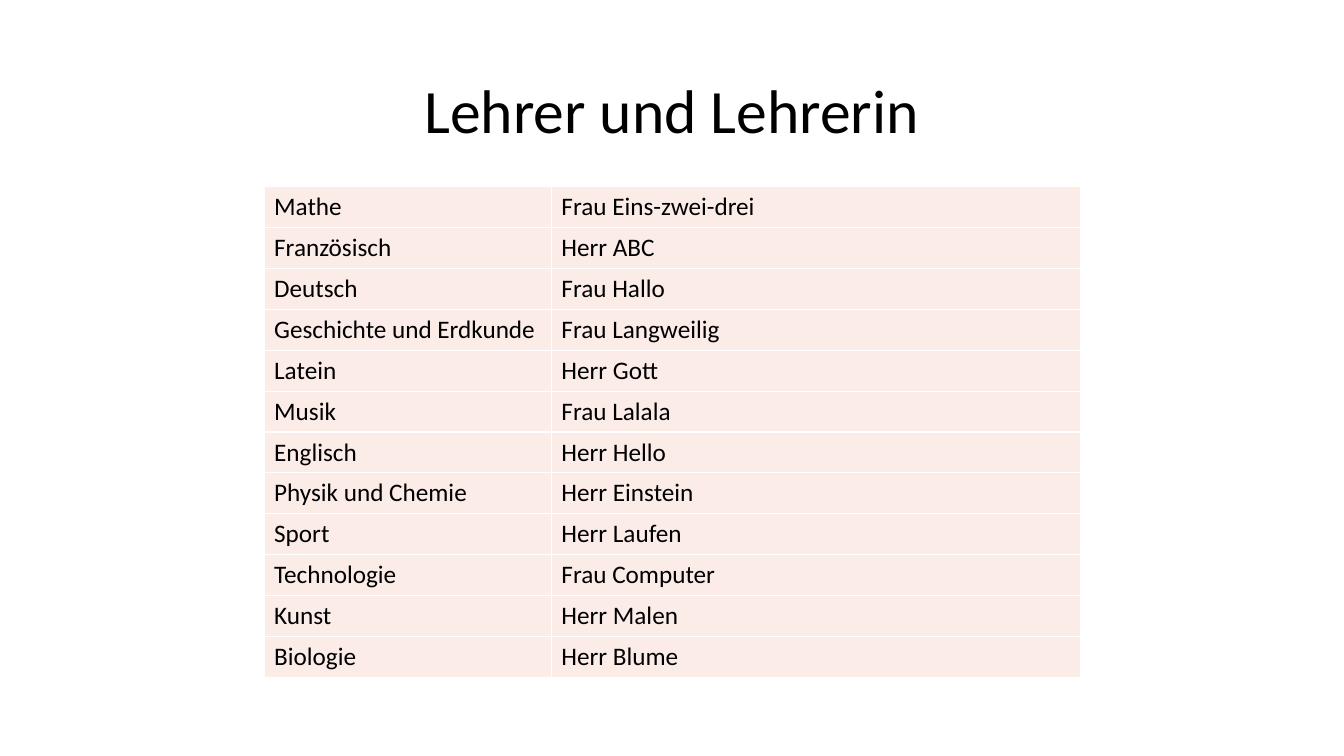
from dataclasses import dataclass

from lxml.etree import SubElement
from pptx import Presentation
from pptx.dml.color import RGBColor as RGB
from pptx.enum.text import MSO_ANCHOR as ANCHOR, PP_ALIGN as ALIGN
from pptx.oxml.ns import qn
from pptx.util import Pt


@dataclass(frozen=True)
class Theme:
    font: str = "Calibri"
    title_size: int = 44
    cell_size: int = 18
    text: str = "000000"
    cell_fill: str = "FCECE8"
    border: str = "FFFFFF"
    border_width: int = 1


THEME = Theme()

TEACHERS = [
    ("Mathe", "Frau Eins-zwei-drei"),
    ("Französisch", "Herr ABC"),
    ("Deutsch", "Frau Hallo"),
    ("Geschichte und Erdkunde", "Frau Langweilig"),
    ("Latein", "Herr Gott"),
    ("Musik", "Frau Lalala"),
    ("Englisch", "Herr Hello"),
    ("Physik und Chemie", "Herr Einstein"),
    ("Sport", "Herr Laufen"),
    ("Technologie", "Frau Computer"),
    ("Kunst", "Herr Malen"),
    ("Biologie", "Herr Blume"),
]
COLUMN_WIDTHS = (205.2, 378)
ROW_HEIGHT = 29.22


def style_paragraph(p, size, align):
    p.alignment = align
    p.font.name = THEME.font
    p.font.size = Pt(size)
    p.font.color.rgb = RGB.from_string(THEME.text)


def set_title(s, text):
    title = s.shapes.title
    title.left, title.top = Pt(66), Pt(28.8)
    title.width, title.height = Pt(828), Pt(104.4)
    tf = title.text_frame
    tf.text = text
    tf.word_wrap = True
    tf.vertical_anchor = ANCHOR.MIDDLE
    p = tf.paragraphs[0]
    p.line_spacing = 0.9
    style_paragraph(p, THEME.title_size, ALIGN.CENTER)


def set_borders(cell):
    tc_pr = cell._tc.get_or_add_tcPr()
    for side in ("a:lnL", "a:lnR", "a:lnT", "a:lnB"):
        ln = SubElement(tc_pr, qn(side), w=str(Pt(THEME.border_width)))
        fill = SubElement(ln, qn("a:solidFill"))
        SubElement(fill, qn("a:srgbClr"), val=THEME.border)


def fill_cell(cell, text):
    set_borders(cell)
    cell.fill.solid()
    cell.fill.fore_color.rgb = RGB.from_string(THEME.cell_fill)
    cell.text = text
    style_paragraph(cell.text_frame.paragraphs[0], THEME.cell_size, ALIGN.LEFT)


def add_grid(s, rows, left, top):
    frame = s.shapes.add_table(
        len(rows), len(COLUMN_WIDTHS), Pt(left), Pt(top),
        Pt(sum(COLUMN_WIDTHS)), Pt(ROW_HEIGHT * len(rows)),
    )
    table = frame.table
    table.first_row = False
    table.horz_banding = False
    for column, width in zip(table.columns, COLUMN_WIDTHS):
        column.width = Pt(width)
    for row, texts in zip(table.rows, rows):
        row.height = Pt(ROW_HEIGHT)
        for cell, text in zip(row.cells, texts):
            fill_cell(cell, text)


def main():
    prs = Presentation()
    prs.slide_width, prs.slide_height = Pt(960), Pt(540)
    s = prs.slides.add_slide(prs.slide_layouts[5])
    set_title(s, "Lehrer und Lehrerin")
    add_grid(s, TEACHERS, 188.64, 133.4)
    prs.save("out.pptx")


if __name__ == "__main__":
    main()
